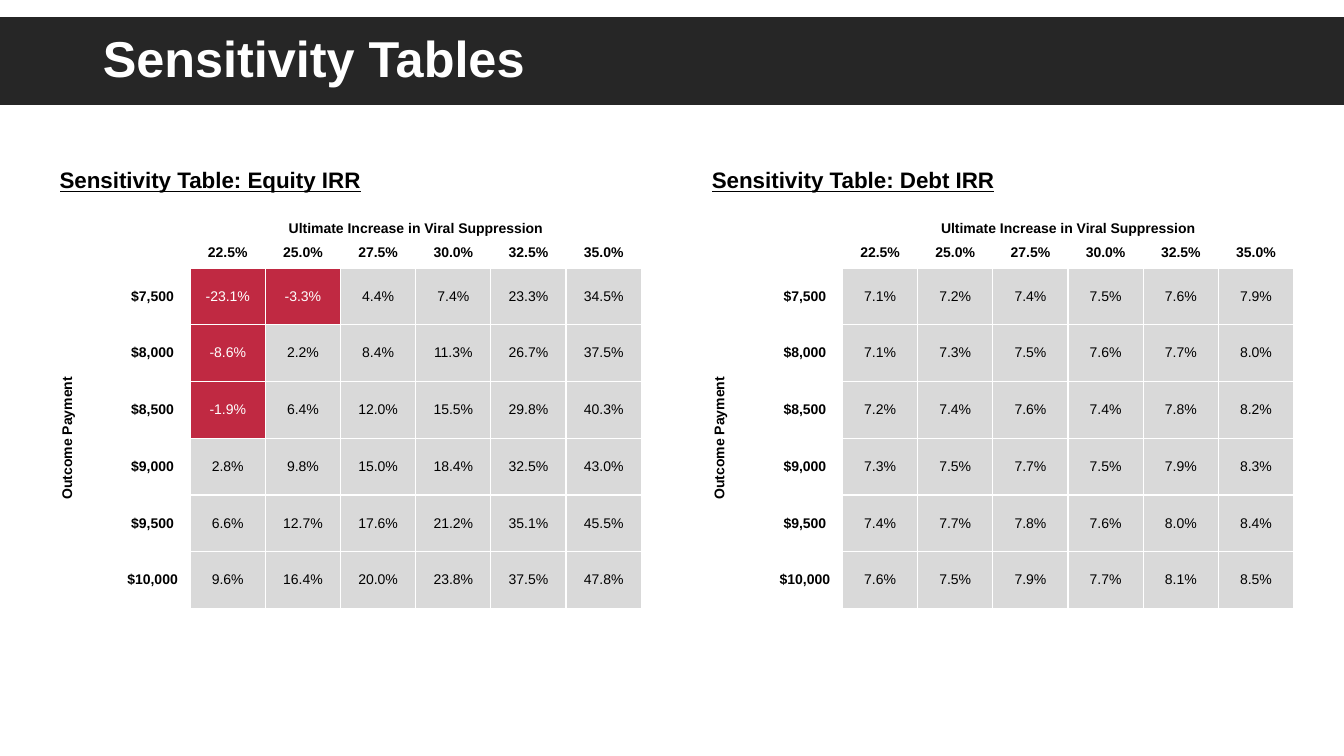
from dataclasses import dataclass

from lxml.etree import SubElement
from pptx import Presentation
from pptx.dml.color import RGBColor
from pptx.enum.shapes import MSO_SHAPE
from pptx.enum.text import MSO_ANCHOR, MSO_AUTO_SIZE, PP_ALIGN
from pptx.oxml.ns import qn
from pptx.util import Inches, Pt


@dataclass(frozen=True)
class Theme:
    font: str = "Arial"
    white: RGBColor = RGBColor(0xFF, 0xFF, 0xFF)
    black: RGBColor = RGBColor(0, 0, 0)
    dark: RGBColor = RGBColor(0x26, 0x26, 0x26)
    grey: RGBColor = RGBColor(0xD9, 0xD9, 0xD9)
    red: RGBColor = RGBColor(0xC0, 0x29, 0x42)
    title: Pt = Pt(36)
    head: Pt = Pt(16)
    body: Pt = Pt(10)
    edge: Pt = Pt(1)


THEME = Theme()

# Shared axes and the two result grids
RATES = ["22.5%", "25.0%", "27.5%", "30.0%", "32.5%", "35.0%"]
PAYS = ["$7,500", "$8,000", "$8,500", "$9,000", "$9,500", "$10,000"]
EQUITY = [
    [-23.1, -3.3, 4.4, 7.4, 23.3, 34.5],
    [-8.6, 2.2, 8.4, 11.3, 26.7, 37.5],
    [-1.9, 6.4, 12.0, 15.5, 29.8, 40.3],
    [2.8, 9.8, 15.0, 18.4, 32.5, 43.0],
    [6.6, 12.7, 17.6, 21.2, 35.1, 45.5],
    [9.6, 16.4, 20.0, 23.8, 37.5, 47.8],
]
DEBT = [
    [7.1, 7.2, 7.4, 7.5, 7.6, 7.9],
    [7.1, 7.3, 7.5, 7.6, 7.7, 8.0],
    [7.2, 7.4, 7.6, 7.4, 7.8, 8.2],
    [7.3, 7.5, 7.7, 7.5, 7.9, 8.3],
    [7.4, 7.7, 7.8, 7.6, 8.0, 8.4],
    [7.6, 7.5, 7.9, 7.7, 8.1, 8.5],
]

# Table measures in inches
TOP, WIDE, HIGH = 1.61, 5.77, 4.43
SIDE = 0.55
HEADS = [0.37, 0.37, 0.31]


def put(item, **values):
    for name, value in values.items():
        setattr(item, name, value)


def style(font, size, color, **extra):
    put(font, name=THEME.font, size=size, **extra)
    font.color.rgb = color


def add_bar(slide):
    bar = slide.shapes.add_shape(
        MSO_SHAPE.RECTANGLE, 0, Inches(0.17), Inches(13.33), Inches(0.87))
    bar.shadow.inherit = False
    bar.fill.solid()
    bar.fill.fore_color.rgb = THEME.dark
    bar.line.fill.background()
    # Keep the bar behind the title
    slide.shapes.title._element.addprevious(bar._element)


def set_title(slide, text):
    title = slide.shapes.title
    put(title, left=Inches(0.92), top=Inches(0.17),
        width=Inches(11.5), height=Inches(0.88))
    frame = title.text_frame
    put(frame, text=text, word_wrap=True, auto_size=MSO_AUTO_SIZE.NONE,
        vertical_anchor=MSO_ANCHOR.MIDDLE)
    para = frame.paragraphs[0]
    put(para, alignment=PP_ALIGN.LEFT, line_spacing=0.9)
    style(para.runs[0].font, THEME.title, THEME.white, bold=True)


def reset(cell):
    """Clear the margins, draw white borders and fill the cell white."""
    put(cell, margin_left=0, margin_right=0, margin_top=0, margin_bottom=0)
    props = cell._tc.get_or_add_tcPr()
    for side in ("a:lnL", "a:lnR", "a:lnT", "a:lnB"):
        line = SubElement(props, qn(side), w=str(THEME.edge))
        fill = SubElement(line, qn("a:solidFill"))
        SubElement(fill, qn("a:srgbClr"), val=str(THEME.white))
    shade(cell, THEME.white)


def shade(cell, color):
    cell.fill.solid()
    cell.fill.fore_color.rgb = color


def write(cell, text, size=THEME.body, color=THEME.black, bold=True,
          line=False, align=PP_ALIGN.CENTER, anchor=MSO_ANCHOR.MIDDLE):
    put(cell, text=text, vertical_anchor=anchor)
    para = cell.text_frame.paragraphs[0]
    para.alignment = align
    style(para.runs[0].font, size, color, bold=bold, underline=line)


def add_grid(slide, left, name, data):
    rows, cols = len(HEADS) + len(PAYS), 2 + len(RATES)
    table = slide.shapes.add_table(
        rows, cols, Inches(left), Inches(TOP), Inches(WIDE), Inches(HIGH)).table
    put(table, first_row=False, horz_banding=False)

    # Sizes: fixed headings, equal shares for the rest
    wides = [SIDE] + [(WIDE - SIDE) / (cols - 1)] * (cols - 1)
    highs = HEADS + [(HIGH - sum(HEADS)) / len(PAYS)] * len(PAYS)
    for col, wide in zip(table.columns, wides):
        col.width = Inches(wide)
    for row, high in zip(table.rows, highs):
        row.height = Inches(high)
    for cell in table.iter_cells():
        reset(cell)

    # Merged headings
    head, across, down = table.cell(0, 0), table.cell(1, 2), table.cell(3, 0)
    head.merge(table.cell(0, cols - 1))
    across.merge(table.cell(1, cols - 1))
    down.merge(table.cell(rows - 1, 0))
    write(head, f"Sensitivity Table: {name}", size=THEME.head, line=True,
          align=PP_ALIGN.LEFT)
    write(across, "Ultimate Increase in Viral Suppression",
          anchor=MSO_ANCHOR.BOTTOM)
    write(down, "Outcome Payment", anchor=MSO_ANCHOR.BOTTOM)
    down._tc.get_or_add_tcPr().set("vert", "vert270")

    # Axis labels and values, with losses in red
    for c, rate in enumerate(RATES, 2):
        write(table.cell(2, c), rate)
    for r, (pay, values) in enumerate(zip(PAYS, data), 3):
        write(table.cell(r, 1), pay)
        for c, value in enumerate(values, 2):
            loss = value < 0
            cell = table.cell(r, c)
            shade(cell, THEME.red if loss else THEME.grey)
            write(cell, f"{value:.1f}%", bold=False,
                  color=THEME.white if loss else THEME.black)


def main():
    deck = Presentation()
    put(deck, slide_width=Inches(13.33), slide_height=Inches(7.5))
    slide = deck.slides.add_slide(deck.slide_layouts[5])
    set_title(slide, "Sensitivity Tables")
    add_bar(slide)
    add_grid(slide, 0.59, "Equity IRR", EQUITY)
    add_grid(slide, 7.06, "Debt IRR", DEBT)
    deck.save("out.pptx")


if __name__ == "__main__":
    main()
